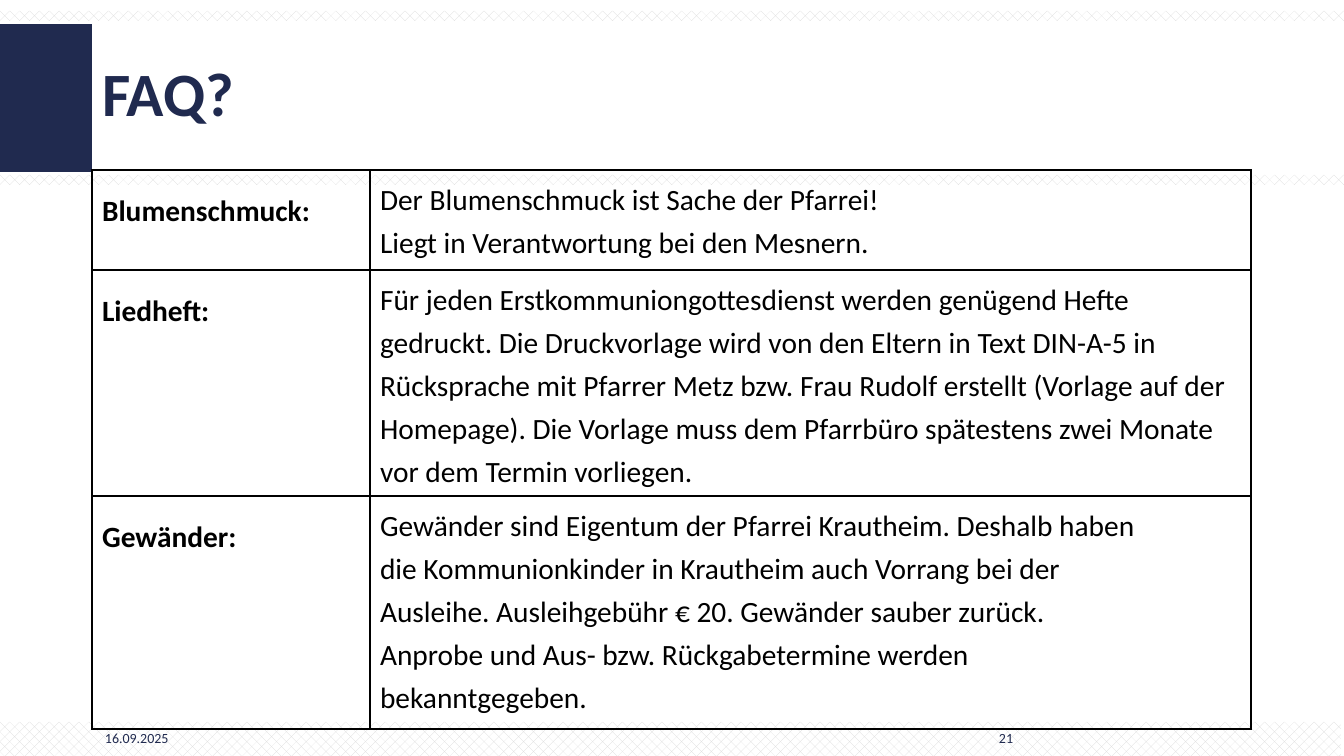
import pptx
import pptx.util
import pptx.dml.color
import pptx.enum.dml
import pptx.enum.shapes
import pptx.enum.text
import pptx.oxml.ns
from lxml import etree

EMU_PER_PX = 914400 / 100.8
NAVY = pptx.dml.color.RGBColor(0x20, 0x2A, 0x4F)
BLACK = pptx.dml.color.RGBColor(0, 0, 0)
WHITE = pptx.dml.color.RGBColor(0xFF, 0xFF, 0xFF)
HATCH_GREY = pptx.dml.color.RGBColor(0xD9, 0xD9, 0xD9)
FONT = "Calibri"
LEFT = pptx.enum.text.PP_ALIGN.LEFT
RIGHT = pptx.enum.text.PP_ALIGN.RIGHT
MIDDLE = pptx.enum.text.MSO_ANCHOR.MIDDLE

HATCH_BANDS = [(0, 722, 1341, 36), (0, 175, 1344, 10), (0, 11, 1344, 10)]
COLUMN_WIDTHS = [278, 881]
ROW_HEIGHTS = [100, 226, 233]
FAQ = [
    ("Blumenschmuck:", [
        "Der Blumenschmuck ist Sache der Pfarrei!",
        "Liegt in Verantwortung bei den Mesnern."]),
    ("Liedheft:", [
        "Für jeden Erstkommuniongottesdienst werden genügend Hefte gedruckt. "
        "Die Druckvorlage wird von den Eltern in Text DIN-A-5 in Rücksprache "
        "mit Pfarrer Metz bzw. Frau Rudolf erstellt (Vorlage auf der Homepage). "
        "Die Vorlage muss dem Pfarrbüro spätestens zwei Monate vor dem Termin "
        "vorliegen."]),
    ("Gewänder:", [
        "Gewänder sind Eigentum der Pfarrei Krautheim. Deshalb haben",
        "die Kommunionkinder in Krautheim auch Vorrang bei der",
        "Ausleihe. Ausleihgebühr € 20. Gewänder sauber zurück.",
        "Anprobe und Aus- bzw. Rückgabetermine werden",
        "bekanntgegeben."]),
]


def px(length):
    return pptx.util.Emu(round(length * EMU_PER_PX))


def box(*lengths):
    return [px(length) for length in lengths]


def write(frame, lines, size, color, bold=False, spacing=1.0, align=LEFT):
    paragraph = frame.paragraphs[0]
    paragraph.alignment = align
    paragraph.line_spacing = spacing
    for index, line in enumerate(lines):
        if index:
            paragraph.add_line_break()
        run = paragraph.add_run()
        run.text = line
        run.font.name = FONT
        run.font.size = pptx.util.Pt(size)
        run.font.bold = bold
        run.font.color.rgb = color


def add_rectangle(slide, place):
    rectangle = slide.shapes.add_shape(
        pptx.enum.shapes.MSO_SHAPE.RECTANGLE, *box(*place))
    rectangle.shadow.inherit = False
    rectangle.line.fill.background()
    return rectangle


def add_hatch_band(slide, place):
    fill = add_rectangle(slide, place).fill
    fill.patterned()
    fill.pattern = pptx.enum.dml.MSO_PATTERN.PERCENT_30
    fill.fore_color.rgb = HATCH_GREY
    fill.back_color.rgb = WHITE


def add_navy_block(slide, place):
    fill = add_rectangle(slide, place).fill
    fill.solid()
    fill.fore_color.rgb = NAVY


def set_title(slide, place, heading):
    title = slide.shapes.title
    title.left, title.top, title.width, title.height = box(*place)
    title.text_frame.word_wrap = True
    title.text_frame.vertical_anchor = MIDDLE
    write(title.text_frame, [heading], 44, NAVY, bold=True, spacing=0.9)


def add_footer(slide, place, wording, align):
    frame = slide.shapes.add_textbox(*box(*place)).text_frame
    frame.word_wrap = True
    write(frame, [wording], 10, NAVY, align=align)


def outline_cell(cell):
    properties = cell._tc.get_or_add_tcPr()
    for side in ("a:lnL", "a:lnR", "a:lnT", "a:lnB"):
        border = etree.SubElement(properties, pptx.oxml.ns.qn(side),
                                  w=str(pptx.util.Pt(1)))
        solid = etree.SubElement(border, pptx.oxml.ns.qn("a:solidFill"))
        etree.SubElement(solid, pptx.oxml.ns.qn("a:srgbClr"), val=str(BLACK))
    cell.fill.background()


def add_faq_table(slide, left, top):
    place = box(left, top, sum(COLUMN_WIDTHS), sum(ROW_HEIGHTS))
    faq = slide.shapes.add_table(len(FAQ), len(COLUMN_WIDTHS), *place).table
    faq.first_row = False
    faq.horz_banding = False
    for column, width in zip(faq.columns, COLUMN_WIDTHS):
        column.width = px(width)
    for row, height, (topic, answer) in zip(faq.rows, ROW_HEIGHTS, FAQ):
        row.height = px(height)
        topic_cell, answer_cell = row.cells
        outline_cell(topic_cell)
        outline_cell(answer_cell)
        write(topic_cell.text_frame, [topic], 21, BLACK, bold=True, spacing=1.5)
        write(answer_cell.text_frame, answer, 21, BLACK, spacing=1.2)


def main():
    presentation = pptx.Presentation()
    presentation.slide_width, presentation.slide_height = box(1344, 756)
    slide = presentation.slides.add_slide(presentation.slide_layouts[5])
    for band in HATCH_BANDS:
        add_hatch_band(slide, band)
    add_navy_block(slide, (0, 24, 92, 148))
    set_title(slide, (92, 24, 1047, 146), "FAQ?")
    add_faq_table(slide, 92, 170)
    add_footer(slide, (95, 725, 99, 31), "16.09.2025", LEFT)
    add_footer(slide, (966, 725, 57, 31), "21", RIGHT)
    presentation.save("out.pptx")


if __name__ == "__main__":
    main()
